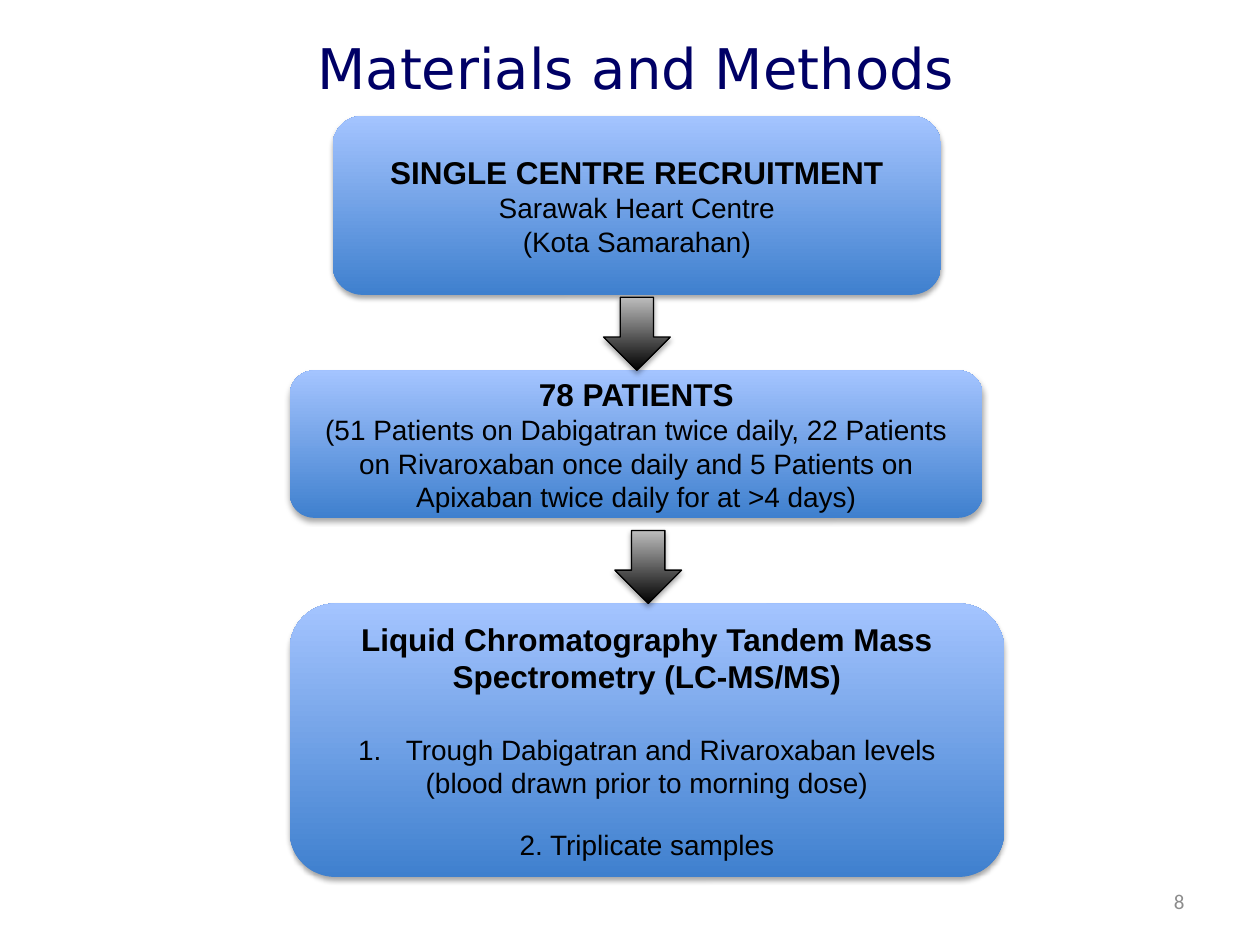
"""Build the Materials and Methods flow slide."""
import lxml.etree
import pptx
import pptx.dml.color
import pptx.enum.shapes
import pptx.enum.text
import pptx.oxml.ns
import pptx.util

Inches = pptx.util.Inches
Pt = pptx.util.Pt
SHAPE = pptx.enum.shapes.MSO_SHAPE
ALIGN = pptx.enum.text.PP_ALIGN
ANCHOR = pptx.enum.text.MSO_ANCHOR
qn = pptx.oxml.ns.qn

HEADING = {"size": Pt(18), "bold": True, "name": "Arial"}
BODY = {"size": Pt(16), "bold": False, "name": "Arial"}
TITLE = {"size": Pt(32), "name": "DejaVu Sans"}
NUMBER = {"size": Pt(12), "name": "Calibri"}
BLUE = ("3F80CE", "A4C4FF")
GREY = ("000000", "BDBDBD")

STEPS = [
    ((2.64, 0.92, 4.83, 1.42), [
        ("SINGLE CENTRE RECRUITMENT", HEADING, {}),
        ("Sarawak Heart Centre", BODY, {}),
        ("(Kota Samarahan)", BODY, {}),
    ]),
    ((2.3, 2.94, 5.5, 1.17), [
        ("78 PATIENTS", HEADING, {}),
        ("(51 Patients on Dabigatran twice daily, 22 Patients on Rivaroxaban once daily "
         "and 5 Patients on Apixaban twice daily for at >4 days)", BODY, {}),
    ]),
    ((2.3, 4.79, 5.67, 2.17), [
        ("Liquid Chromatography Tandem Mass Spectrometry (LC-MS/MS)", HEADING, {}),
        ("Trough Dabigatran and Rivaroxaban levels", BODY,
         {"space_before": Pt(21), "numbered": True}),
        ("(blood drawn prior to morning dose)", BODY, {}),
        ("2. Triplicate samples", BODY, {"space_before": Pt(16)}),
    ]),
]
ARROW_LEFTS = (4.79, 4.88)
ARROW_WIDTH, ARROW_HEIGHT = 0.53, 0.58


def rgb(value):
    """Turn a hex string into a colour."""
    return pptx.dml.color.RGBColor.from_string(value)


def number_paragraph(para):
    """Give a paragraph automatic numbering with a hanging indent."""
    props = para._p.get_or_add_pPr()
    props.set("marL", str(Inches(0.38)))
    props.set("indent", str(Inches(-0.38)))
    lxml.etree.SubElement(props, qn("a:buFont"), typeface="+mj-lt")
    lxml.etree.SubElement(props, qn("a:buAutoNum"), type="arabicPeriod")


def write(box, lines, color="000000", align=ALIGN.CENTER, anchor=ANCHOR.MIDDLE):
    """Fill a box with formatted paragraphs."""
    frame = box.text_frame
    frame.word_wrap = True
    frame.vertical_anchor = anchor
    for index, (text, font, layout) in enumerate(lines):
        para = frame.add_paragraph() if index else frame.paragraphs[0]
        para.alignment = align
        if "space_before" in layout:
            para.space_before = layout["space_before"]
        if layout.get("numbered"):
            number_paragraph(para)
        span = para.add_run()
        span.text = text
        span.font.color.rgb = rgb(color)
        for name, value in font.items():
            setattr(span.font, name, value)


def add_shadow(shape):
    """Add a soft shadow below a shape."""
    shape.shadow.inherit = False
    effects = shape._element.spPr.find(qn("a:effectLst"))
    shadow = lxml.etree.SubElement(
        effects, qn("a:outerShdw"), blurRad=str(Pt(3.1)), dist=str(Pt(1.8)),
        dir="5400000", rotWithShape="0")
    color = lxml.etree.SubElement(shadow, qn("a:srgbClr"), val="000000")
    lxml.etree.SubElement(color, qn("a:alpha"), val="35000")


def add_gradient_shape(page, kind, place, colors, outline=None):
    """Add a shadowed shape whose gradient runs from bottom to top."""
    shape = page.shapes.add_shape(kind, *map(Inches, place))
    shape.fill.gradient()
    shape.fill.gradient_angle = 90
    for stop, color, position in zip(shape.fill.gradient_stops, colors, (0, 1)):
        stop.color.rgb = rgb(color)
        stop.position = position
    if outline:
        shape.line.color.rgb = rgb(outline)
        shape.line.width = Pt(0.75)
    else:
        shape.line.fill.background()
    add_shadow(shape)
    return shape


def main():
    """Lay out the slide and save it."""
    deck = pptx.Presentation()
    deck.slide_width, deck.slide_height = Inches(10), Inches(7.5)
    page = deck.slides.add_slide(deck.slide_layouts[6])

    for place, lines in STEPS:
        write(add_gradient_shape(page, SHAPE.ROUNDED_RECTANGLE, place, BLUE), lines)

    title = page.shapes.add_textbox(*map(Inches, (0.55, 0.22, 9, 0.95)))
    write(title, [("Materials and Methods", TITLE, {})], "000066", anchor=ANCHOR.TOP)
    number = page.shapes.add_textbox(*map(Inches, (7.17, 6.95, 2.33, 0.4)))
    write(number, [("8", NUMBER, {})], "8C8C8C", ALIGN.RIGHT)

    for left, (target, _) in zip(ARROW_LEFTS, STEPS[1:]):
        place = (left, target[1] - ARROW_HEIGHT, ARROW_WIDTH, ARROW_HEIGHT)
        add_gradient_shape(page, SHAPE.DOWN_ARROW, place, GREY, "000000")

    deck.save("out.pptx")


if __name__ == "__main__":
    main()
